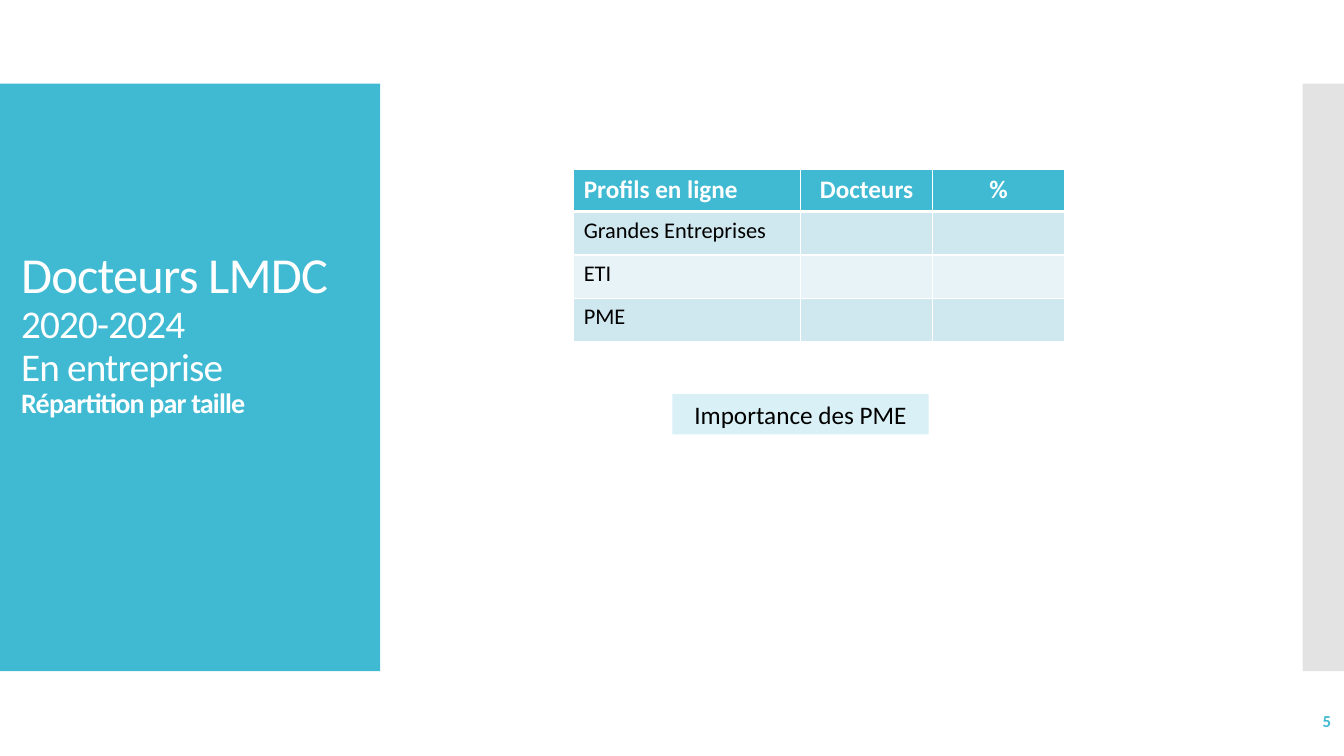
import pptx
import pptx.dml.color
import pptx.enum.shapes
import pptx.enum.text
import pptx.oxml
import pptx.oxml.ns
import pptx.util
from dataclasses import dataclass
from typing import Any

Inches = pptx.util.Inches
Pt = pptx.util.Pt
RGBColor = pptx.dml.color.RGBColor
ALIGN = pptx.enum.text.PP_ALIGN
ANCHOR = pptx.enum.text.MSO_ANCHOR
NS = pptx.oxml.ns.nsdecls("a")

TEAL = RGBColor(0x40, 0xBA, 0xD2)
GREY = RGBColor(0xC8, 0xC8, 0xC8)
WHITE = RGBColor(0xFF, 0xFF, 0xFF)
BLACK = RGBColor(0x00, 0x00, 0x00)
BAND_DARK = RGBColor(0xCF, 0xE7, 0xEE)
BAND_LIGHT = RGBColor(0xE8, 0xF3, 0xF7)
PALE_TEAL = RGBColor(0xD9, 0xF1, 0xF6)
FONT = "Calibri"


@dataclass
class Box:
    left: float
    top: float
    width: float
    height: float

    def lengths(self) -> list[int]:
        return [Inches(v) for v in (self.left, self.top, self.width, self.height)]


@dataclass
class TitleLine:
    text: str
    size: int
    bold: bool = False


TITLE_LINES = [
    TitleLine("Docteurs LMDC", 36),
    TitleLine("2020-2024", 28),
    TitleLine("En entreprise", 28),
    TitleLine("Répartition par taille", 20, True),
]
HEADERS = ["Profils en ligne", "Docteurs", "%"]
SIZES = ["Grandes Entreprises", "ETI", "PME"]
COLUMN_WIDTHS = [2.25, 1.31, 1.31]
ROW_HEIGHTS = [0.42, 0.43, 0.43, 0.43]


def style(p: Any, size: int, color: RGBColor, bold: bool = False,
          align: Any = ALIGN.LEFT) -> None:
    p.alignment = align
    p.font.name, p.font.size, p.font.bold = FONT, Pt(size), bold
    p.font.color.rgb = color


def add_rect(s: Any, box: Box, color: RGBColor) -> Any:
    sp = s.shapes.add_shape(pptx.enum.shapes.MSO_SHAPE.RECTANGLE, *box.lengths())
    sp.shadow.inherit = False
    sp.fill.solid()
    sp.fill.fore_color.rgb = color
    sp.line.fill.background()
    return sp


def set_borders(cell: Any, top: int, bottom: int) -> None:
    """Draw white cell borders; widths are in points."""
    tc_pr = cell._tc.get_or_add_tcPr()
    for side, width in (("L", 1), ("R", 1), ("T", top), ("B", bottom)):
        tc_pr.append(pptx.oxml.parse_xml(
            f'<a:ln{side} {NS} w="{Pt(width)}"><a:solidFill>'
            f'<a:srgbClr val="{WHITE}"/></a:solidFill></a:ln{side}>'))


def add_title(s: Any) -> None:
    sp = s.shapes.title
    sp.left, sp.top, sp.width, sp.height = Box(0.11, 1.23, 3.77, 5.03).lengths()
    tf = sp.text_frame
    tf.word_wrap = True
    tf.auto_size = pptx.enum.text.MSO_AUTO_SIZE.NONE
    tf.vertical_anchor = ANCHOR.MIDDLE
    tf.margin_bottom = Inches(0.89)
    p = tf.paragraphs[0]
    p.alignment = ALIGN.LEFT
    p.line_spacing = 0.9
    for i, line in enumerate(TITLE_LINES):
        if i:
            p.add_line_break()
        r = p.add_run()
        r.text = line.text
        r.font.name, r.font.size, r.font.bold = FONT, Pt(line.size), line.bold
        r.font.color.rgb = WHITE
        r.font._element.set("spc", "-60")


def add_size_table(s: Any) -> None:
    box = Box(5.69, 1.68, sum(COLUMN_WIDTHS), sum(ROW_HEIGHTS))
    table = s.shapes.add_table(
        len(ROW_HEIGHTS), len(COLUMN_WIDTHS), *box.lengths()).table
    for column, width in zip(table.columns, COLUMN_WIDTHS):
        column.width = Inches(width)
    for row, height in zip(table.rows, ROW_HEIGHTS):
        row.height = Inches(height)
    rows = [HEADERS] + [[size, "", ""] for size in SIZES]
    for i, texts in enumerate(rows):
        header = i == 0
        fill = TEAL if header else BAND_DARK if i % 2 else BAND_LIGHT
        for j, text in enumerate(texts):
            cell = table.cell(i, j)
            set_borders(cell, 3 if i == 1 else 1, 3 if header else 1)
            cell.fill.solid()
            cell.fill.fore_color.rgb = fill
            cell.text = text
            style(cell.text_frame.paragraphs[0], 18 if header else 16,
                  WHITE if header else BLACK, header,
                  ALIGN.CENTER if j else ALIGN.LEFT)


def add_slide_number(s: Any) -> None:
    tf = s.shapes.add_textbox(*Box(11.63, 6.95, 1.67, 0.4).lengths()).text_frame
    tf.word_wrap = True
    tf.vertical_anchor = ANCHOR.MIDDLE
    tf.text = "5"
    style(tf.paragraphs[0], 12, TEAL, True, ALIGN.RIGHT)


def main() -> None:
    prs = pptx.Presentation()
    prs.slide_width, prs.slide_height = Inches(13.33), Inches(7.5)
    s = prs.slides.add_slide(prs.slide_layouts[5])

    title_panel = add_rect(s, Box(0, 0.83, 3.77, 5.83), TEAL)
    side_bar = add_rect(s, Box(12.92, 0.83, 0.41, 5.83), GREY)
    color = side_bar._element.spPr.find(".//" + pptx.oxml.ns.qn("a:srgbClr"))
    color.append(pptx.oxml.parse_xml(f'<a:alpha {NS} val="50000"/>'))
    for panel in (title_panel, side_bar):
        s.shapes.title._element.addprevious(panel._element)

    add_title(s)
    add_size_table(s)
    add_slide_number(s)

    message = add_rect(s, Box(6.67, 3.91, 2.54, 0.4), PALE_TEAL)
    message.text_frame.text = "Importance des PME"
    style(message.text_frame.paragraphs[0], 18, BLACK, align=ALIGN.CENTER)

    prs.save("out.pptx")


if __name__ == "__main__":
    main()
